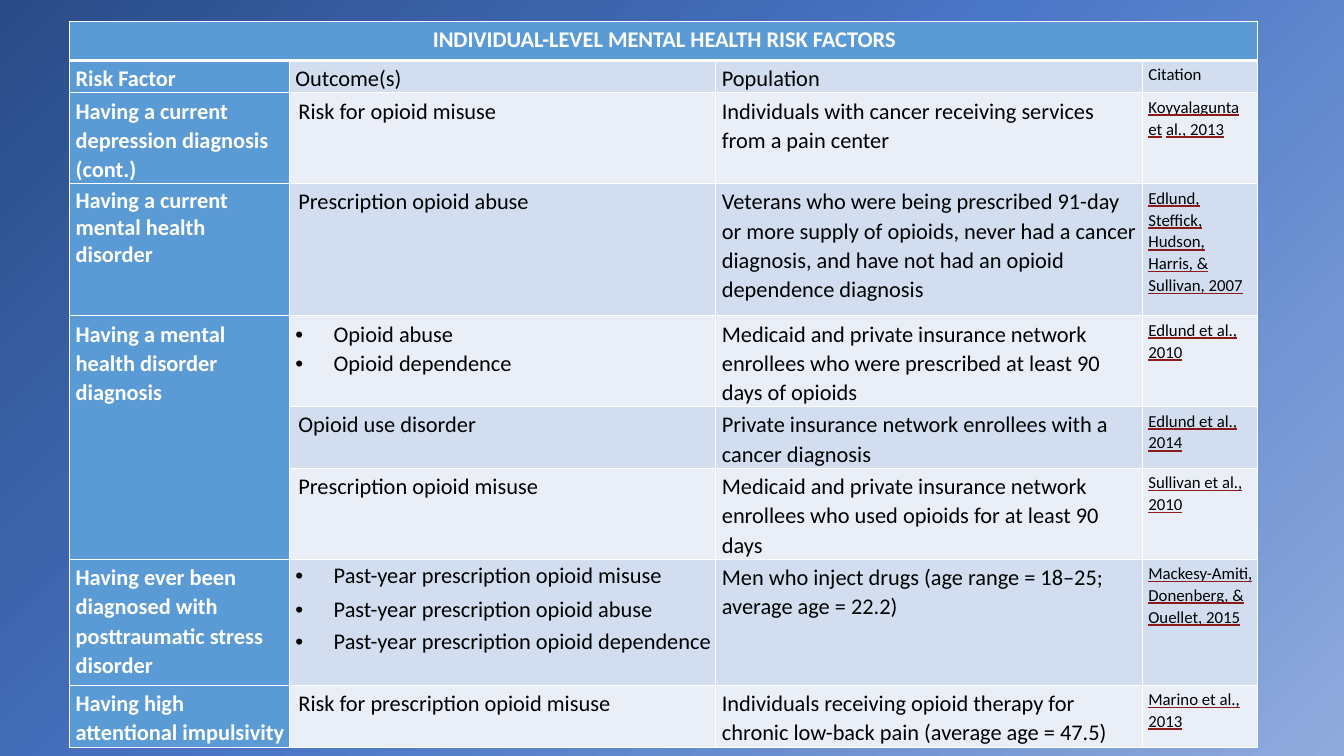
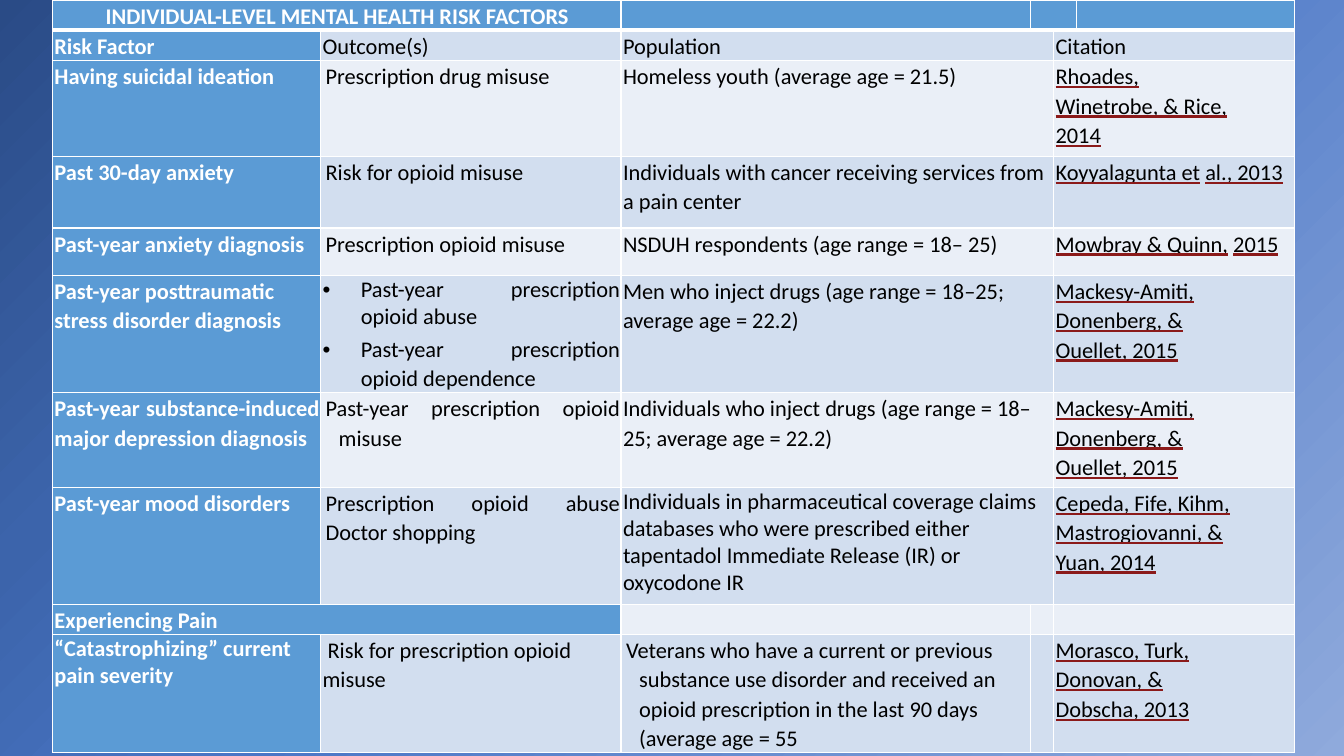
from copy import deepcopy
from dataclasses import dataclass
from typing import Optional, Union

from lxml import etree
from pptx import Presentation
from pptx import util as u
from pptx.dml.color import RGBColor
from pptx.enum import text as t
from pptx.oxml.ns import qn


@dataclass(frozen=True)
class Theme:
    font: str = "Calibri"
    body_size: float = 16
    white: str = "FFFFFF"
    ink: str = "000000"
    accent: str = "5B9BD5"
    bands: tuple = ("EAEFF7", "D2DEEF")
    underline: str = "8B1A1A"
    backdrop: tuple = ((0, "2A4B86"), (0.27, "3C64AB"), (0.48, "4A76C6"), (1, "8FAADC"))
    rule: float = 1
    heavy_rule: float = 3
    spacing: float = 1.07
    tight: float = 0.99
    hanging: float = 0.38


THEME = Theme()
LEFT, JUSTIFY, CENTER = t.PP_ALIGN.LEFT, t.PP_ALIGN.JUSTIFY, t.PP_ALIGN.CENTER


@dataclass(frozen=True)
class Line:
    text: str
    indent: float = 0
    first: float = 0
    align: t.PP_ALIGN = LEFT
    spacing: float = THEME.spacing
    after: float = 0
    bullet: bool = False


# A None entry continues the cell above it.
Entry = Union[str, tuple, None]


@dataclass(frozen=True)
class Row:
    height: float
    entries: tuple[Entry, ...]
    spans: tuple[int, ...] = ()


@dataclass(frozen=True)
class Board:
    left: float
    top: float
    columns: tuple[float, ...]
    spans: tuple[int, ...]
    margins: tuple[float, float, float, float]
    cite_size: float
    rows: tuple[Row, ...]


def bullet(text: str, align: t.PP_ALIGN = JUSTIFY, spacing: float = THEME.spacing,
           after: float = 0) -> Line:
    return Line(text, THEME.hanging, -THEME.hanging, align, spacing, after, True)


TITLE = (Line("INDIVIDUAL-LEVEL MENTAL HEALTH RISK FACTORS", align=CENTER),)
HEADINGS = ("Risk Factor", "Outcome(s)", "Population", "Citation")
INJECTORS = "Men who inject drugs (age range = 18–25; average age = 22.2)"
CANCER = "Individuals with cancer receiving services from a pain center"
MACKESY = "Mackesy-Amiti,\nDonenberg, &\nOuellet, 2015"
# A tilde in a citation is a space without underline.
KOYYALAGUNTA = "Koyyalagunta et~al., 2013"

BOARDS = (
    Board(0.69, 0.21, (2.18, 4.23, 4.23, 1.14), (1, 1, 1, 1), (0.06, 0.03, 0.04, 0), 12, (
        Row(0.39, (TITLE,), (4,)),
        Row(0.32, HEADINGS),
        Row(0.9, ("Having a current depression diagnosis (cont.)",
                  "Risk for opioid misuse", CANCER, KOYYALAGUNTA)),
        Row(1.31, ((Line("Having a current mental health disorder", spacing=THEME.tight),),
                   "Prescription opioid abuse",
                   "Veterans who were being prescribed 91-day or more supply of opioids, never "
                   "had a cancer diagnosis, and have not had an opioid dependence diagnosis",
                   "Edlund, Steffick,\nHudson, Harris, &\nSullivan, 2007")),
        Row(0.9, ("Having a mental health disorder diagnosis",
                  (bullet("Opioid abuse", LEFT), bullet("Opioid dependence", LEFT)),
                  "Medicaid and private insurance network enrollees who were prescribed "
                  "at least 90 days of opioids", "Edlund et al., 2010")),
        Row(0.6, (None, "Opioid use disorder",
                  "Private insurance network enrollees with a cancer diagnosis",
                  "Edlund et al., 2014")),
        Row(0.9, (None, "Prescription opioid misuse",
                  "Medicaid and private insurance network enrollees who used opioids "
                  "for at least 90 days", "Sullivan et al., 2010")),
        Row(1.25, ("Having ever been diagnosed with posttraumatic stress disorder",
                   (bullet("Past-year prescription opioid misuse", spacing=THEME.tight, after=2.4),
                    bullet("Past-year prescription opioid abuse", spacing=1.12, after=2.2),
                    bullet("Past-year prescription opioid dependence")),
                   INJECTORS, MACKESY)),
        Row(0.62, ("Having high attentional impulsivity", "Risk for prescription opioid misuse",
                   "Individuals receiving opioid therapy for chronic low-back pain "
                   "(average age = 47.5)", "Marino et al., 2013")),
    )),
    Board(0.52, 0, (2.66, 2.98, 4.06, 0.23, 0.23, 2.16), (1, 1, 2, 2), (0.02, 0.01, 0.01, 0), 16, (
        Row(0.29, (TITLE, "", "", ""), (2, 1, 2, 1)),
        Row(0.3, HEADINGS),
        Row(0.95, ("Having suicidal ideation", "Prescription drug misuse",
                   "Homeless youth (average age = 21.5)",
                   "Rhoades,\nWinetrobe, & Rice,\n2014")),
        Row(0.71, ("Past 30-day anxiety", "Risk for opioid misuse", CANCER, KOYYALAGUNTA)),
        Row(0.47, ("Past-year anxiety diagnosis", "Prescription opioid misuse",
                   "NSDUH respondents (age range = 18– 25)", "Mowbray & Quinn,~2015")),
        Row(1.16, ("Past-year posttraumatic stress disorder diagnosis",
                   (bullet("Past-year prescription opioid abuse", spacing=THEME.tight, after=2.4),
                    bullet("Past-year prescription opioid dependence")),
                   INJECTORS, MACKESY)),
        Row(0.94, ((Line("Past-year substance-induced major depression diagnosis", align=JUSTIFY),),
                   (Line("Past-year prescription opioid misuse", 0.16, -0.13, JUSTIFY),),
                   "Individuals who inject drugs (age range = 18–25; average age = 22.2)",
                   MACKESY)),
        Row(1.16, ("Past-year mood disorders",
                   (Line("Prescription opioid abuse Doctor shopping", 0.03, align=JUSTIFY),),
                   (Line("Individuals in pharmaceutical coverage claims databases who were "
                         "prescribed either tapentadol Immediate Release (IR) or oxycodone IR",
                         spacing=THEME.tight),),
                   "Cepeda, Fife, Kihm,\nMastrogiovanni, &\nYuan, 2014")),
        Row(0.29, ("Experiencing Pain", "", "", ""), (2, 1, 1, 2)),
        Row(1.17, ((Line("“Catastrophizing” current pain severity", spacing=THEME.tight),),
                   (Line("Risk for prescription opioid misuse", 0, 0.05),),
                   (Line("Veterans who have a current or previous substance use disorder and "
                         "received an opioid prescription in the last 90 days (average age = 55",
                         0.16, -0.13),),
                   "", "Morasco, Turk,\nDonovan, &\nDobscha, 2013"), (1, 1, 1, 1, 2)),
    )),
)


def add_solid(parent: etree._Element, color: str) -> None:
    fill = etree.SubElement(parent, qn("a:solidFill"))
    etree.SubElement(fill, qn("a:srgbClr"), val=color)


def write(para, text: str, *, size: float, color: str, bold: bool = False,
          underline: bool = False) -> None:
    span = para.add_run()
    span.text = text
    font = span.font
    font.name, font.size, font.bold = THEME.font, u.Pt(size), bold
    font.color.rgb = RGBColor.from_string(color)
    if underline:
        font.underline = True
        line_fill = etree.Element(qn("a:uFill"))
        add_solid(line_fill, THEME.underline)
        font.fill._xPr.find(qn("a:solidFill")).addnext(line_fill)


def format_para(para, line: Line) -> None:
    para.alignment = line.align
    para.line_spacing = line.spacing
    para.space_after = u.Pt(line.after)
    props = para._p.get_or_add_pPr()
    props.set("marL", str(u.Inches(line.indent)))
    props.set("indent", str(u.Inches(line.first)))
    if line.bullet:
        color = etree.SubElement(props, qn("a:buClr"))
        etree.SubElement(color, qn("a:srgbClr"), val=THEME.ink)
        etree.SubElement(props, qn("a:buFont"), typeface="Arial")
        etree.SubElement(props, qn("a:buChar"), char="•")


def style_cell(cell, color: str, margins: tuple, row: int) -> None:
    """Set the margins, borders and fill, and keep an empty cell's line small."""
    cell.margin_left, cell.margin_top, cell.margin_right, cell.margin_bottom = map(u.Inches, margins)
    props = cell._tc.get_or_add_tcPr()
    for side in "LRTB":
        heavy = (row, side) in ((0, "B"), (1, "T"))
        width = u.Pt(THEME.heavy_rule if heavy else THEME.rule)
        add_solid(etree.SubElement(props, qn(f"a:ln{side}"), w=str(width)), color=THEME.white)
    cell.fill.solid()
    cell.fill.fore_color.rgb = RGBColor.from_string(color)
    etree.SubElement(cell.text_frame.paragraphs[0]._p, qn("a:endParaRPr"), sz="1200")


def fill_cell(cell, entry: Entry, row: int, place: int, last: bool, cite_size: float) -> None:
    """Write an entry in the format of its column; a plain string takes the column's indent."""
    cited = last and row > 1
    if isinstance(entry, str):
        indent = 0.03 if place == 1 and row > 1 else 0
        entry = tuple(Line(part, indent) for part in entry.split("\n") if part)
    strong = row == 0 or place == 0
    color = THEME.white if strong else THEME.ink
    size = cite_size if last and row > 0 else THEME.body_size
    frame = cell.text_frame
    for index, line in enumerate(entry):
        para = frame.add_paragraph() if index else frame.paragraphs[0]
        format_para(para, line)
        for number, part in enumerate(line.text.split("~")):
            if number:
                write(para, " ", size=size, color=color)
            write(para, part, size=size, color=color, bold=strong, underline=cited)


def draw_board(page, board: Board) -> None:
    rows, columns = board.rows, board.columns
    frame = page.shapes.add_table(
        len(rows), len(columns), u.Inches(board.left), u.Inches(board.top),
        u.Inches(sum(columns)), u.Inches(sum(row.height for row in rows)))
    table = frame.table
    table.first_row = table.horz_banding = False
    for column, width in zip(table.columns, columns):
        column.width = u.Inches(width)
    label_top: Optional[int] = None
    for r, row in enumerate(rows):
        table.rows[r].height = u.Inches(row.height)
        spans = row.spans or board.spans
        start = 0
        for place, (entry, span) in enumerate(zip(row.entries, spans)):
            strong = r == 0 or place == 0
            color = THEME.accent if strong else THEME.bands[r % 2]
            for c in range(start, start + span):
                style_cell(table.cell(r, c), color, board.margins, r)
            cell = table.cell(r, start)
            if place == 0 and entry is not None:
                label_top = r
            if entry is not None:
                fill_cell(cell, entry, r, place, place == len(spans) - 1, board.cite_size)
            if span > 1:
                cell.merge(table.cell(r, start + span - 1))
            start += span
        next_continues = r + 1 < len(rows) and rows[r + 1].entries[0] is None
        if row.entries[0] is None and not next_continues:
            table.cell(label_top, 0).merge(table.cell(r, 0))


def paint_backdrop(master) -> None:
    fill = master.background.fill
    fill.gradient()
    fill.gradient_angle = 315
    stop_list = master.element.find(".//" + qn("p:bgPr")).find(".//" + qn("a:gsLst"))
    while len(stop_list) < len(THEME.backdrop):
        stop_list.append(deepcopy(stop_list[0]))
    for stop, (position, color) in zip(fill.gradient_stops, THEME.backdrop):
        stop.position = position
        stop.color.rgb = RGBColor.from_string(color)


def main() -> None:
    deck = Presentation()
    deck.slide_width, deck.slide_height = u.Inches(13.33), u.Inches(7.5)
    paint_backdrop(deck.slide_master)
    blank = deck.slide_layouts.get_by_name("Blank")
    for board in BOARDS:
        draw_board(deck.slides.add_slide(blank), board)
    deck.save("out.pptx")


if __name__ == "__main__":
    main()
